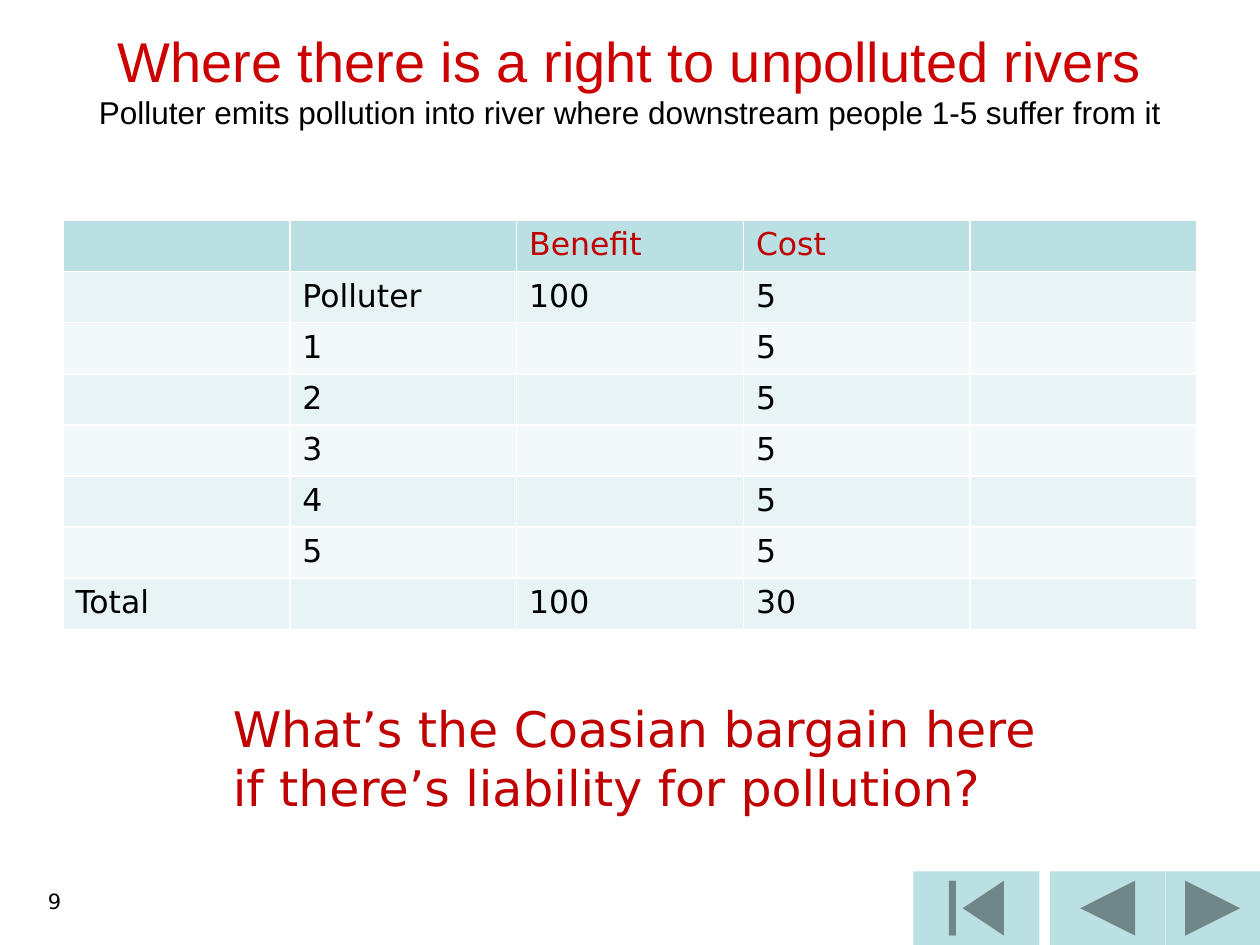
from pptx import Presentation
from pptx.dml.color import RGBColor
from pptx.enum.shapes import MSO_SHAPE
from pptx.enum.text import MSO_ANCHOR, PP_ALIGN
from pptx.util import Pt

RED = RGBColor(0xCC, 0x00, 0x00)
DARK = RGBColor(0xC0, 0x00, 0x00)
BLACK = RGBColor(0x00, 0x00, 0x00)
TEAL = RGBColor(0xBB, 0xE0, 0xE3)
LIGHT = RGBColor(0xE7, 0xF3, 0xF4)
PALE = RGBColor(0xF3, 0xF9, 0xFA)

SANS = "DejaVu Sans"


def write(para, text, size=18, color=BLACK, font=SANS):
    run = para.add_run()
    run.text = text
    run.font.size = Pt(size)
    run.font.name = font
    run.font.bold = False
    run.font.color.rgb = color


class Deck:
    """Holds the style and the current slide."""

    def __init__(self, slide):
        self.slide = slide

    def button(self, kind, left, width):
        box = self.slide.shapes.add_shape(
            kind, Pt(left), Pt(498), Pt(width), Pt(42))
        box.shadow.inherit = False
        box.fill.solid()
        box.fill.fore_color.rgb = TEAL
        box.line.fill.background()

    def frame(self, left, top, width, height, anchor=MSO_ANCHOR.TOP):
        box = self.slide.shapes.add_textbox(
            Pt(left), Pt(top), Pt(width), Pt(height))
        frame = box.text_frame
        frame.word_wrap = True
        frame.vertical_anchor = anchor
        return frame

    def title(self, head, sub):
        para = self.frame(0, 0, 720, 90, MSO_ANCHOR.MIDDLE).paragraphs[0]
        para.alignment = PP_ALIGN.CENTER
        write(para, head, size=32, color=RED, font="Arial")
        para.add_line_break()
        write(para, sub, font="Arial")

    def label(self, lines, left, top, width, height, align=PP_ALIGN.LEFT,
              **style):
        frame = self.frame(left, top, width, height)
        for num, line in enumerate(lines):
            para = frame.add_paragraph() if num else frame.paragraphs[0]
            para.alignment = align
            write(para, line, **style)

    def table(self, rows, left, top, width, height):
        grid = self.slide.shapes.add_table(
            len(rows), len(rows[0]), Pt(left), Pt(top), Pt(width),
            Pt(height)).table
        for r, row in enumerate(rows):
            fill = LIGHT if r % 2 else PALE
            for c, text in enumerate(row):
                cell = grid.cell(r, c)
                cell.fill.solid()
                cell.fill.fore_color.rgb = fill if r else TEAL
                if text:
                    write(cell.text_frame.paragraphs[0], text,
                          color=BLACK if r else DARK)


def main():
    prs = Presentation()
    prs.slide_width, prs.slide_height = Pt(720), Pt(540)
    deck = Deck(prs.slides.add_slide(prs.slide_layouts[6]))

    # Navigation buttons
    deck.button(MSO_SHAPE.ACTION_BUTTON_BACK_OR_PREVIOUS, 600, 66)
    deck.button(MSO_SHAPE.ACTION_BUTTON_BEGINNING, 522, 72)
    deck.button(MSO_SHAPE.ACTION_BUTTON_FORWARD_OR_NEXT, 666, 54)

    # Title
    deck.title("Where there is a right to unpolluted rivers",
               "Polluter emits pollution into river where downstream "
               "people 1-5 suffer from it")

    # Benefits and costs
    people = [["", str(num), "", "5", ""] for num in range(1, 6)]
    rows = [["", "", "Benefit", "Cost", ""],
            ["", "Polluter", "100", "5", ""],
            *people,
            ["Total", "", "100", "30", ""]]
    deck.table(rows, 36, 126, 648, 233.6)

    # Slide number
    deck.label(["9"], -108, 504, 150, 36, align=PP_ALIGN.RIGHT, size=12)

    # Question
    deck.label(["What’s the Coasian bargain here",
                "if there’s liability for pollution?"],
               126, 395.5, 488, 75, size=28, color=DARK)

    prs.save("out.pptx")


if __name__ == "__main__":
    main()
